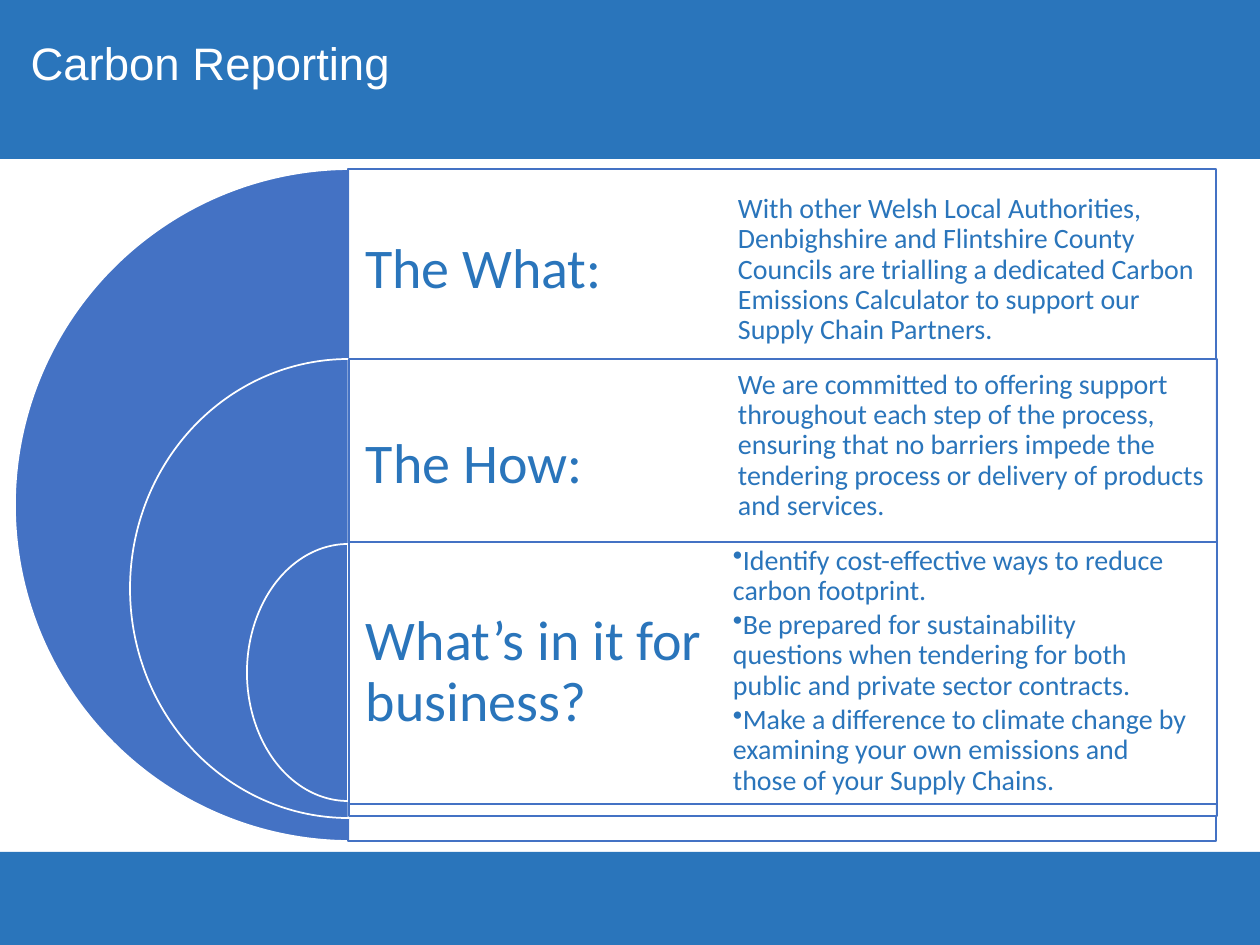
from pptx import Presentation, util as u
from pptx.dml.color import RGBColor
from pptx.enum import shapes, text
from pptx.oxml.ns import qn
from lxml import etree

SCALE = 914400 / 126
BLUE, ROYAL, WHITE = "2A75BB", "4472C4", "FFFFFF"


def px(*vals):
    return [round(v * SCALE) for v in vals]


def color(value):
    return RGBColor.from_string(value)


deck = Presentation()
deck.slide_width, deck.slide_height = px(1260, 945)
slide = deck.slides.add_slide(deck.slide_layouts[5])
draw = slide.shapes

# (kind, box, fill, line)
Kind = shapes.MSO_SHAPE
parts = [
    (Kind.RECTANGLE, (0, 852, 1260, 93), BLUE, None),
    (Kind.RECTANGLE, (0, 0, 1260, 159), BLUE, None),
    (Kind.PIE, (15, 169, 672, 672), ROYAL, WHITE),
    (Kind.RECTANGLE, (348, 169, 868, 672), WHITE, ROYAL),
    (Kind.PIE, (130, 359, 437, 459), ROYAL, WHITE),
    (Kind.RECTANGLE, (349, 359, 868, 457), WHITE, ROYAL),
    (Kind.PIE, (247, 544, 202, 257), ROYAL, WHITE),
    (Kind.RECTANGLE, (349, 542, 868, 262), WHITE, ROYAL),
]
for kind, box, fill, line in parts:
    part = draw.add_shape(kind, *px(*box))
    part.shadow.inherit = False
    part.fill.solid()
    part.fill.fore_color.rgb = color(fill)
    if line:
        part.line.color.rgb = color(line)
        part.line.width = u.Pt(1)
    else:
        part.line.fill.background()
    if kind == Kind.PIE:  # left half, 90 to 270 degrees
        part.adjustments[0], part.adjustments[1] = 54, 162
    if fill == WHITE:
        tint = part._element.spPr.find(qn("a:solidFill"))[0]
        etree.SubElement(tint, qn("a:alpha"), val="90000")

title = draw.title
draw._spTree.append(title._element)  # in front of the band
title.left, title.top, title.width, title.height = px(18, 35, 1216, 69)
title.text_frame.text = "Carbon Reporting"
title.text_frame.vertical_anchor = text.MSO_ANCHOR.TOP
head = title.text_frame.paragraphs[0]
head.alignment = text.PP_ALIGN.LEFT
head.line_spacing = 0.9
head.font.size, head.font.name = u.Pt(26), "Arial"
head.font.color.rgb = color(WHITE)

# (box, size, inset, bottom inset, lines)
notes = [
    ((348, 169, 435, 202), 32, 17, 17, ["The What:"]),
    ((349, 359, 435, 212), 32, 17, 17, ["The How:"]),
    ((349, 542, 435, 262), 32, 17, 17, ["What’s in it for business?"]),
    ((704, 169, 538, 202), 16, 34, 34, [
        "With other Welsh Local Authorities, Denbighshire and Flintshire "
        "County Councils are trialling a dedicated Carbon Emissions "
        "Calculator to support our Supply Chain Partners."]),
    ((704, 360, 538, 202), 16, 34, 64, [
        "We are committed to offering support throughout each step of the "
        "process, ensuring that no barriers impede the tendering process or "
        "delivery of products and services."]),
    ((699, 553, 523, 236), 16, 34, 34, [
        "Identify cost-effective ways to reduce carbon footprint.",
        "Be prepared for sustainability questions when tendering for both "
        "public and private sector contracts.",
        "Make a difference to climate change by examining your own emissions "
        "and those of your Supply Chains."]),
]
for box, size, inset, base, lines in notes:
    frame = draw.add_textbox(*px(*box)).text_frame
    frame.word_wrap = True
    frame.vertical_anchor = text.MSO_ANCHOR.MIDDLE
    frame.margin_left, frame.margin_top, frame.margin_right = px(inset, inset, inset)
    frame.margin_bottom = px(base)[0]
    frame.text = "\n".join(lines)
    for para in frame.paragraphs:
        para.line_spacing = 0.9
        if len(lines) > 1:
            para.space_after = u.Pt(2.4)
            props = para._p.get_or_add_pPr()
            props.set("marL", "0")
            props.set("indent", "0")
            etree.SubElement(props, qn("a:buChar"), char="•")
        para.font.size, para.font.name = u.Pt(size), "Calibri"
        para.font.color.rgb = color(BLUE)

deck.save("out.pptx")
